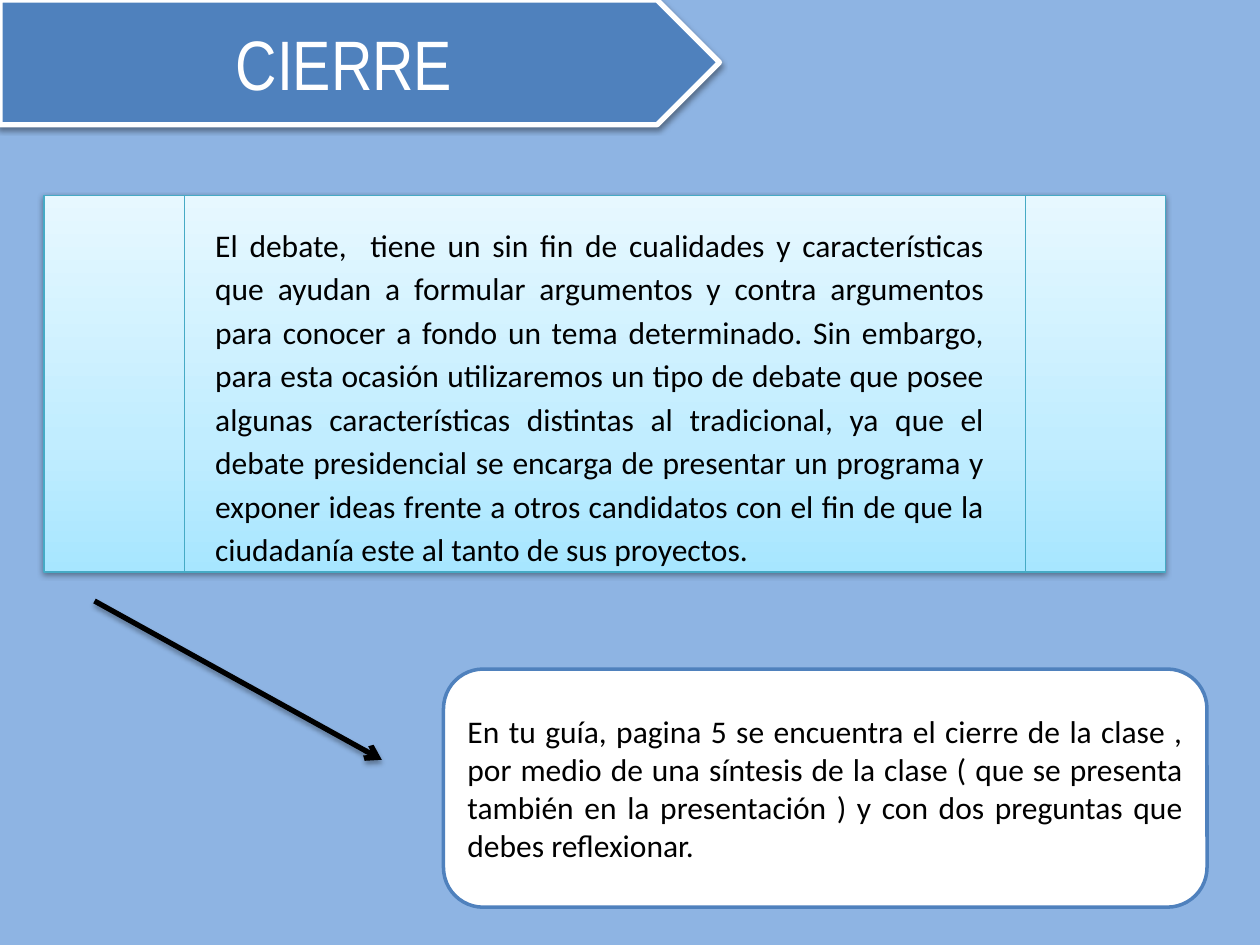
import copy

import pptx
import pptx.dml.color
import pptx.enum.dml
import pptx.enum.shapes
import pptx.enum.text
import pptx.oxml
import pptx.oxml.ns
import pptx.util

Inches, Pt = pptx.util.Inches, pptx.util.Pt
SHAPE = pptx.enum.shapes.MSO_SHAPE
ALIGN = pptx.enum.text.PP_ALIGN
ANCHOR = pptx.enum.text.MSO_ANCHOR
qn = pptx.oxml.ns.qn
rgb = pptx.dml.color.RGBColor.from_string


def add_shadow(s, alpha, distance):
    """Append a downward soft black shadow; call after the line is set."""
    s._element.spPr.append(pptx.oxml.parse_xml(
        f'<a:effectLst {pptx.oxml.ns.nsdecls("a")}>'
        f'<a:outerShdw blurRad="{Pt(3.1)}" dist="{Pt(distance)}" dir="5400000" rotWithShape="0">'
        f'<a:srgbClr val="000000"><a:alpha val="{alpha * 1000}"/></a:srgbClr>'
        '</a:outerShdw></a:effectLst>'))


def write(tf, text, size, font, color, align):
    tf.word_wrap = True
    p = tf.paragraphs[0]
    p.alignment = align
    r = p.add_run()
    r.text = text
    r.font.size, r.font.name = Pt(size), font
    r.font.color.rgb = rgb(color)
    return p


prs = pptx.Presentation()
prs.slide_width, prs.slide_height = Inches(10), Inches(7.5)
slide = prs.slides.add_slide(prs.slide_layouts[5])
slide.background.fill.solid()
slide.background.fill.fore_color.rgb = rgb("8EB4E3")
shapes = slide.shapes

# Title on its arrow banner
banner = shapes.add_shape(SHAPE.PENTAGON, 0, 0, Inches(5.71), Inches(0.99))
banner.fill.solid()
banner.fill.fore_color.rgb = rgb("4F81BD")
banner.line.color.rgb = rgb("FFFFFF")
banner.line.width = Pt(3)
add_shadow(banner, 38, 1.6)

title = shapes.title
title.left, title.top, title.width, title.height = 0, 0, Inches(5.46), Inches(0.99)
title.text_frame.vertical_anchor = ANCHOR.MIDDLE
write(title.text_frame, "CIERRE", 40, "Arial Narrow", "FFFFFF", ALIGN.CENTER)
title._element.addprevious(banner._element)

# Closing note
note = shapes.add_shape(SHAPE.ROUNDED_RECTANGLE, Inches(3.52), Inches(5.31),
                        Inches(6.06), Inches(1.89))
note.shadow.inherit = False
note.fill.solid()
note.fill.fore_color.rgb = rgb("FFFFFF")
note.line.color.rgb = rgb("4F81BD")
note.line.width = Pt(2)
note.text_frame.vertical_anchor = ANCHOR.MIDDLE
write(note.text_frame,
      "En tu guía, pagina 5 se encuentra el cierre de la clase , por medio de una "
      "síntesis de la clase ( que se presenta también en la presentación ) y con dos "
      "preguntas que debes reflexionar. ", 18, "Calibri", "000000", ALIGN.JUSTIFY)

# Debate panel
panel = shapes.add_shape(SHAPE.FLOWCHART_PREDEFINED_PROCESS, Inches(0.35), Inches(1.55),
                         Inches(8.9), Inches(2.99))
panel.fill.gradient()
panel.fill.gradient_angle = 90
stop_list = panel._element.spPr.find(qn("a:gradFill")).find(qn("a:gsLst"))
stop_list.insert(1, copy.deepcopy(stop_list[0]))
for stop, (position, color) in zip(panel.fill.gradient_stops,
                                   [(0, "A7E6FF"), (0.35, "C1EDFF"), (1, "E7F8FF")]):
    stop.position = position
    stop.color.rgb = rgb(color)
panel.line.color.rgb = rgb("46AAC5")
panel.line.width = Pt(0.75)
add_shadow(panel, 38, 1.6)

debate = shapes.add_textbox(Inches(1.61), Inches(1.7), Inches(6.3), Inches(2.6))
p = write(debate.text_frame,
          "El debate,  tiene un sin fin de cualidades y características que ayudan a "
          "formular argumentos y contra argumentos para conocer a fondo un tema "
          "determinado. Sin embargo, para esta ocasión utilizaremos un tipo de debate que "
          "posee algunas características distintas al tradicional, ya que el debate "
          "presidencial se encarga de presentar un programa y exponer ideas frente a otros "
          "candidatos con el fin de que la ciudadanía este al tanto de sus proyectos.",
          18, "Calibri", "000000", ALIGN.JUSTIFY)
p.line_spacing = 1.15
p.space_after = Pt(10)

# Arrow from the panel towards the note
arrow = shapes.add_connector(pptx.enum.shapes.MSO_CONNECTOR.STRAIGHT,
                             Inches(0.75), Inches(4.77), Inches(3.03), Inches(6.03))
arrow.line.color.rgb = rgb("000000")
arrow.line.width = Pt(3)
arrow.line._get_or_add_ln().append(pptx.oxml.parse_xml(
    f'<a:tailEnd {pptx.oxml.ns.nsdecls("a")} type="arrow"/>'))
add_shadow(arrow, 35, 1.8)

prs.save("out.pptx")
